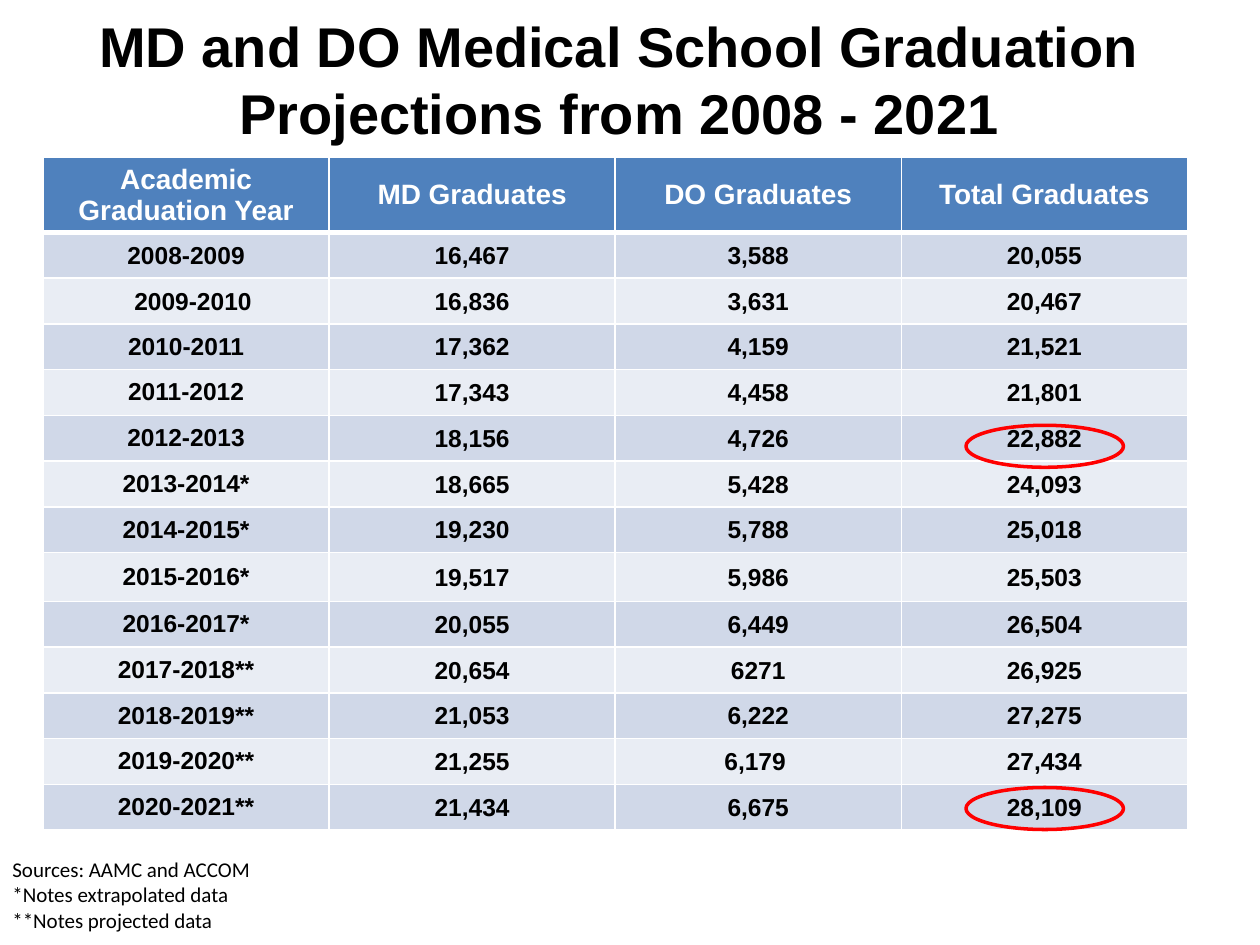
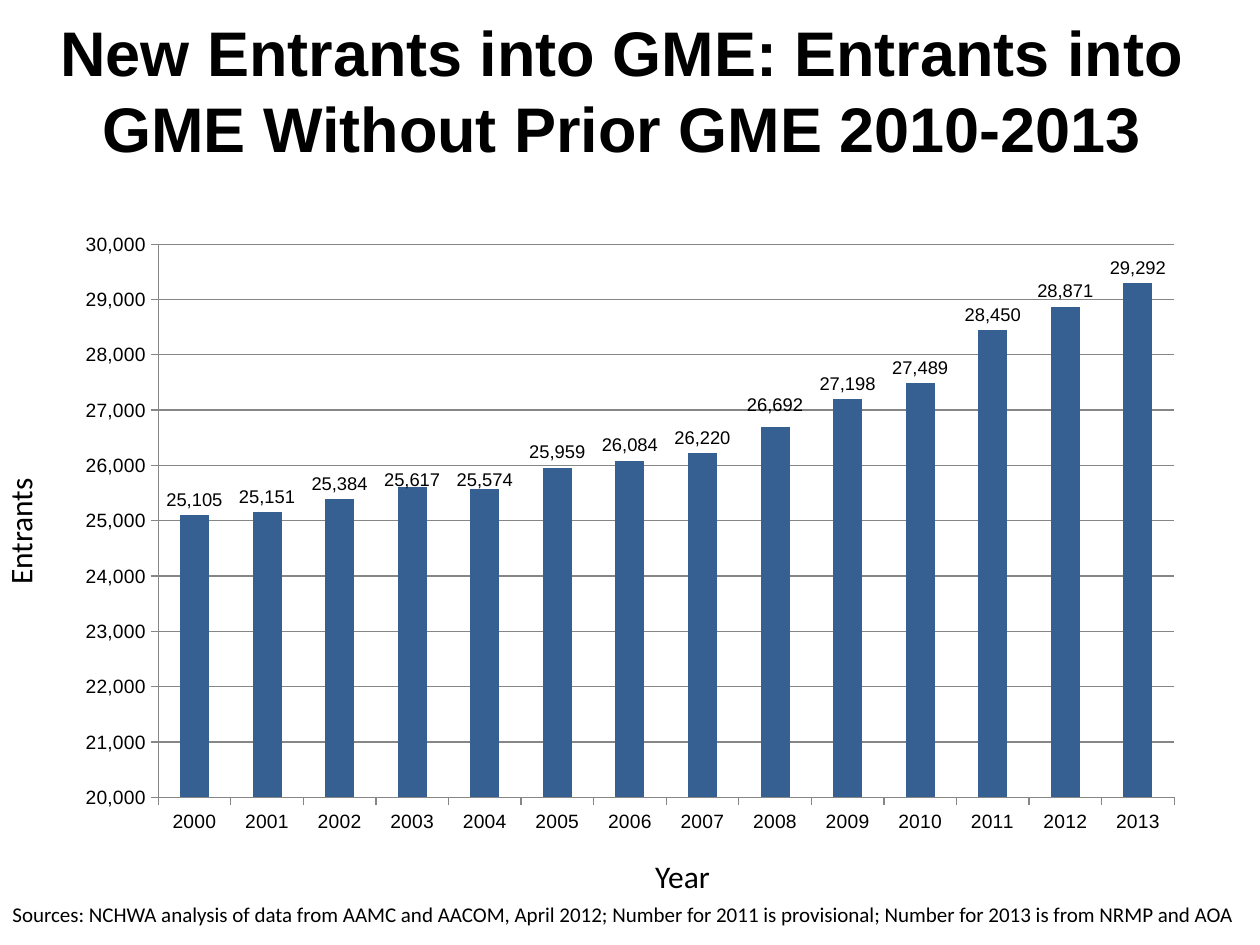
from lxml.etree import SubElement
from pptx import Presentation
from pptx.chart.data import CategoryChartData
from pptx.dml.color import RGBColor
from pptx.enum.chart import XL_CHART_TYPE, XL_LABEL_POSITION, XL_TICK_MARK
from pptx.enum.shapes import MSO_SHAPE
from pptx.enum.text import MSO_ANCHOR, PP_ALIGN
from pptx.oxml import parse_xml
from pptx.oxml.ns import nsdecls, qn
from pptx.util import Inches, Pt

COLS, ROWS = 120, 90
COLORS = {"text": "000000", "white": "FFFFFF", "header": "4F81BD",
          "band_dark": "D0D8E8", "band_light": "E9EDF4",
          "ring": "FF0000", "bar": "376092", "axis": "868686"}
TITLE = {"name": "Arial", "bold": True}
NOTE = {"name": "Calibri", "size": Pt(12)}
AXIS_TITLE = {"name": "Calibri", "size": Pt(18)}
HEAD_CELL = {"name": "Arial", "size": Pt(16), "bold": True}
BODY_CELL = {"name": "Arial", "size": Pt(14), "bold": True}
TICK_LABEL = {"name": "Arial", "size": Pt(11)}
BAR_LABEL = {"name": "Arial", "size": Pt(10.5)}
TIGHT = {"margin_left": Inches(0.01), "margin_right": Inches(0.01),
         "margin_top": Inches(0.01), "margin_bottom": 0}

GRADUATES = [
    ("Academic Graduation Year", "MD Graduates", "DO Graduates", "Total Graduates"),
    ("2008-2009", "16,467", "3,588", "20,055"),
    ("2009-2010", "16,836", "3,631", "20,467"),
    ("2010-2011", "17,362", "4,159", "21,521"),
    ("2011-2012", "17,343", "4,458", "21,801"),
    ("2012-2013", "18,156", "4,726", "22,882"),
    ("2013-2014*", "18,665", "5,428", "24,093"),
    ("2014-2015*", "19,230", "5,788", "25,018"),
    ("2015-2016*", "19,517", "5,986", "25,503"),
    ("2016-2017*", "20,055", "6,449", "26,504"),
    ("2017-2018**", "20,654", "6271", "26,925"),
    ("2018-2019**", "21,053", "6,222", "27,275"),
    ("2019-2020**", "21,255", "6,179", "27,434"),
    ("2020-2021**", "21,434", "6,675", "28,109"),
]
HEAD_HEIGHT, ROW_HEIGHT, TALL_ROWS = 7.1, 4.36, {8: 4.65}
CELL_NUDGES = {(2, 0): {"margin_left": Inches(0.12)},
               (12, 2): {"margin_right": Inches(0.06)}}

ENTRANTS = [25105, 25151, 25384, 25617, 25574, 25959, 26084,
            26220, 26692, 27198, 27489, 28450, 28871, 29292]
PLOT_PERCENT = {"x": 8.4, "y": 3.8, "w": 89.6, "h": 88.7}
LABEL_SHIFT_PERCENT = {3: 1.4, 4: 1, 8: -1.1}


def rgb(key):
    return RGBColor.from_string(COLORS[key])


def apply(target, values):
    for name, value in values.items():
        setattr(target, name, value)


def style_font(font, values, color="text"):
    apply(font, values)
    font.color.rgb = rgb(color)


def manual_layout(percents, inner=False):
    """Chart layout element from percentages of the chart area."""
    layout = parse_xml(f'<c:layout {nsdecls("c")}><c:manualLayout/></c:layout>')
    settings = {}
    if inner:
        settings = {"layoutTarget": "inner", "xMode": "edge", "yMode": "edge"}
    settings.update({k: f"{v / 100:.3f}" for k, v in percents.items()})
    for tag, value in settings.items():
        SubElement(layout[0], qn(f"c:{tag}")).set("val", value)
    return layout


class Deck:
    def __init__(self):
        self.prs = Presentation()
        self.prs.slide_width, self.prs.slide_height = Inches(10), Inches(7.5)
        self.s = None

    def slide(self):
        self.s = self.prs.slides.add_slide(self.prs.slide_layouts[6])

    def x(self, cols):
        return round(self.prs.slide_width * cols / COLS)

    def y(self, rows):
        return round(self.prs.slide_height * rows / ROWS)

    def box(self, left, top, width, height):
        return self.x(left), self.y(top), self.x(width), self.y(height)

    def text(self, area, lines, font, align=PP_ALIGN.LEFT,
             anchor=MSO_ANCHOR.TOP, vert=None):
        sp = self.s.shapes.add_textbox(*self.box(*area))
        tf = sp.text_frame
        apply(tf, {"word_wrap": True, "vertical_anchor": anchor})
        if vert:
            sp._element.txBody.bodyPr.set("vert", vert)
        for i, line in enumerate(lines):
            p = tf.add_paragraph() if i else tf.paragraphs[0]
            p.alignment = align
            r = p.add_run()
            r.text = line
            style_font(r.font, font)

    def title(self, area, text, size):
        self.text(area, [text], {**TITLE, "size": Pt(size)},
                  PP_ALIGN.CENTER, MSO_ANCHOR.MIDDLE)

    def ring(self, left, top):
        sp = self.s.shapes.add_shape(MSO_SHAPE.OVAL, *self.box(left, top, 15, 4))
        sp.shadow.inherit = False
        sp.fill.background()
        sp.line.color.rgb = rgb("ring")
        sp.line.width = Pt(2)

    def borders(self, cell, widths):
        tcPr = cell._tc.get_or_add_tcPr()
        for i, (side, width) in enumerate(widths.items()):
            tcPr.insert(i, parse_xml(
                f'<a:ln{side} {nsdecls("a")} w="{Pt(width)}"><a:solidFill>'
                f'<a:srgbClr val="{COLORS["white"]}"/></a:solidFill></a:ln{side}>'))

    def cell(self, cell, text, row, col):
        head = row == 0
        fill = "header" if head else "band_dark" if row % 2 else "band_light"
        cell.vertical_anchor = MSO_ANCHOR.MIDDLE
        if not head and (col or row < 3):
            apply(cell, TIGHT)
        apply(cell, CELL_NUDGES.get((row, col), {}))
        cell.fill.solid()
        cell.fill.fore_color.rgb = rgb(fill)
        self.borders(cell, {"L": 1, "R": 1, "T": 3 if row == 1 else 1,
                            "B": 3 if head else 1})
        p = cell.text_frame.paragraphs[0]
        p.alignment = PP_ALIGN.CENTER
        r = p.add_run()
        r.text = text
        style_font(r.font, HEAD_CELL if head else BODY_CELL,
                   "white" if head else "text")

    def table(self, left, top, width, data):
        heights = [HEAD_HEIGHT] + [TALL_ROWS.get(i, ROW_HEIGHT)
                                   for i in range(1, len(data))]
        table = self.s.shapes.add_table(
            len(data), len(data[0]),
            *self.box(left, top, width, sum(heights))).table
        table.horz_banding = False
        for row, (values, height) in enumerate(zip(data, heights)):
            table.rows[row].height = self.y(height)
            for col, value in enumerate(values):
                self.cell(table.cell(row, col), value, row, col)

    def axis(self, axis):
        axis.major_tick_mark = XL_TICK_MARK.OUTSIDE
        style_font(axis.tick_labels.font, TICK_LABEL)
        lines = [axis.format.line]
        if axis.has_major_gridlines:
            lines.append(axis.major_gridlines.format.line)
        for line in lines:
            line.color.rgb = rgb("axis")
            line.width = Pt(0.75)

    def column_chart(self, area, categories, values):
        data = CategoryChartData(number_format="#,##0")
        data.categories = categories
        data.add_series("Series 1", values)
        chart = self.s.shapes.add_chart(
            XL_CHART_TYPE.COLUMN_CLUSTERED, *self.box(*area), data).chart
        apply(chart, {"has_legend": False, "has_title": False})
        style_font(chart.font, {"name": "Calibri", "size": Pt(10)})
        apply(chart.value_axis, {"minimum_scale": 20000, "maximum_scale": 30000,
                                 "major_unit": 1000, "has_major_gridlines": True})
        apply(chart.value_axis.tick_labels, {"number_format": "#,##0",
                                             "number_format_is_linked": False})
        self.axis(chart.value_axis)
        self.axis(chart.category_axis)

        plot = chart.plots[0]
        apply(plot, {"gap_width": 150, "vary_by_categories": False})
        series = plot.series[0]
        series.format.fill.solid()
        series.format.fill.fore_color.rgb = rgb("bar")
        labels = series.data_labels
        apply(labels, {"show_value": True, "number_format": "#,##0",
                       "number_format_is_linked": False,
                       "position": XL_LABEL_POSITION.OUTSIDE_END})
        style_font(labels.font, BAR_LABEL)
        for i in LABEL_SHIFT_PERCENT:
            label = series.points[i].data_label
            style_font(label.font, BAR_LABEL)
            label.position = XL_LABEL_POSITION.OUTSIDE_END
        for dLbl in series._element.iter(qn("c:dLbl")):
            idx = dLbl.find(qn("c:idx"))
            shift = LABEL_SHIFT_PERCENT[int(idx.get("val"))]
            idx.addnext(manual_layout({"x": 0, "y": shift}))

        plot_area = chart._chartSpace.find(".//" + qn("c:plotArea"))
        for old in plot_area.findall(qn("c:layout")):
            plot_area.remove(old)
        plot_area.insert(0, manual_layout(PLOT_PERCENT, inner=True))


def graduates_slide(deck):
    deck.slide()
    deck.table(4.1, 15, 109, GRADUATES)
    deck.title((5, 0, 108, 15),
               "MD and DO Medical School Graduation Projections from 2008 - 2021", 32)
    deck.text((0, 81, 115, 8.75), ["Sources: AAMC and ACCOM",
                                   "*Notes extrapolated data",
                                   "**Notes projected data"], NOTE)
    for top in (40.5, 75):
        deck.ring(92, top)


def entrants_slide(deck):
    deck.slide()
    deck.title((2.5, 1, 113.5, 15),
               "New Entrants into GME: Entrants into GME Without Prior GME 2010-2013", 36)
    deck.text((0, 85.25, 122, 4.5),
              ["Sources: NCHWA analysis of data from AAMC and AACOM, April 2012; "
               "Number for 2011 is provisional; Number for 2013 is from NRMP and AOA"],
              NOTE)
    years = [str(2000 + i) for i in range(len(ENTRANTS))]
    deck.column_chart((6, 21, 108, 59.4), years, ENTRANTS)
    deck.text((-0.5, 42.75, 6, 15.75), ["Entrants"], AXIS_TITLE,
              PP_ALIGN.CENTER, vert="vert270")
    deck.text((46, 81, 38, 4.8), ["Year"], AXIS_TITLE, PP_ALIGN.CENTER)


def main():
    deck = Deck()
    graduates_slide(deck)
    entrants_slide(deck)
    deck.prs.save("out.pptx")


if __name__ == "__main__":
    main()
